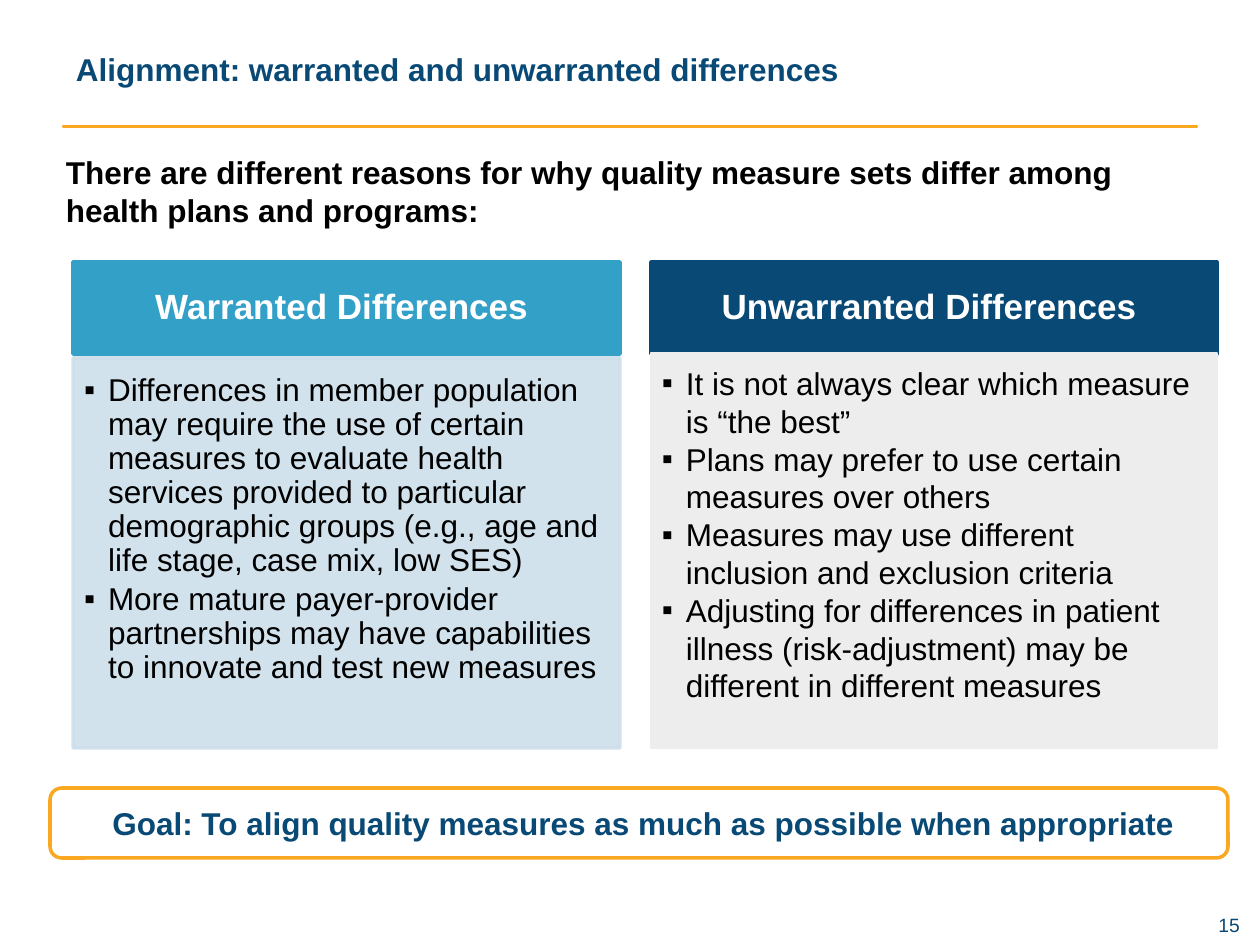
from lxml import etree
from pptx import Presentation, util as u
from pptx.dml.color import RGBColor
from pptx.enum import shapes, text
from pptx.oxml.ns import qn

SCALE = 914400 / 126
NAVY = RGBColor(0x09, 0x49, 0x75)
GOLD = RGBColor(0xFA, 0xA7, 0x21)
TEAL = RGBColor(0x33, 0xA0, 0xC8)
PALE_BLUE = RGBColor(0xCE, 0xDF, 0xEB)
GREY = RGBColor(0xED, 0xED, 0xED)
WHITE = RGBColor(0xFF, 0xFF, 0xFF)
BLACK = RGBColor(0x00, 0x00, 0x00)

INSETS = (13, 6, 13, 6)
HEADING_INSETS = (15, 9, 15, 9)
LEFT, CENTER, RIGHT = text.PP_ALIGN.LEFT, text.PP_ALIGN.CENTER, text.PP_ALIGN.RIGHT
TOP, MIDDLE = text.MSO_ANCHOR.TOP, text.MSO_ANCHOR.MIDDLE

WARRANTED = [
    "Differences in member population may require the use of certain measures to evaluate "
    "health services provided to particular demographic groups (e.g., age and life stage, "
    "case mix, low SES)",
    "More mature payer-provider partnerships may have capabilities to innovate and test new measures",
]
UNWARRANTED = [
    "It is not always clear which measure is “the best”",
    "Plans may prefer to use certain measures over others",
    "Measures may use different inclusion and exclusion criteria",
    "Adjusting for differences in patient illness (risk-adjustment) may be different in "
    "different measures",
]


def px(length):
    return round(length * SCALE)


def add_block(page, area, fill, line, width, kind=shapes.MSO_SHAPE.RECTANGLE):
    block = page.shapes.add_shape(kind, *map(px, area))
    block.shadow.inherit = False
    block.fill.solid()
    block.fill.fore_color.rgb = fill
    block.line.color.rgb = line
    block.line.width = u.Pt(width)
    return block


def add_box(page, area):
    return page.shapes.add_textbox(*map(px, area))


def set_opacity(block, percent):
    for color in block._element.spPr.iter(qn("a:srgbClr")):
        etree.SubElement(color, qn("a:alpha"), val=str(percent * 1000))


def add_bullet(para, indent):
    properties = para._p.get_or_add_pPr()
    properties.set("marL", str(px(indent)))
    properties.set("indent", str(-px(indent)))
    etree.SubElement(properties, qn("a:buFont"), typeface="Arial")
    etree.SubElement(properties, qn("a:buChar"), char="▪")


def write(box, lines, color, size=18, bold=False, align=LEFT, anchor=TOP,
          insets=INSETS, spacing=None, after=0, bullets=False):
    frame = box.text_frame
    frame.word_wrap = True
    frame.vertical_anchor = anchor
    frame.margin_left, frame.margin_top, frame.margin_right, frame.margin_bottom = map(px, insets)
    for index, line in enumerate(lines):
        para = frame.add_paragraph() if index else frame.paragraphs[0]
        para.text = line
        para.alignment = align
        if spacing:
            para.line_spacing = spacing
        if after:
            para.space_after = u.Pt(after)
        if bullets:
            add_bullet(para, 24)
        para.font.name = "Arial"
        para.font.size = u.Pt(size)
        para.font.bold = bold
        para.font.color.rgb = color


def add_heading(page, area, line, fill):
    heading = add_block(page, area, fill, fill, 2)
    write(heading, [line], WHITE, 20, True, CENTER, MIDDLE, HEADING_INSETS, 0.9)


def main():
    deck = Presentation()
    deck.slide_width, deck.slide_height = px(1260), px(945)
    page = deck.slides.add_slide(deck.slide_layouts[6])

    add_block(page, (63, 126, 1134, 1), GOLD, GOLD, 1)
    write(add_box(page, (63, 21, 1134, 95)),
          ["Alignment: warranted and unwarranted differences"], NAVY, bold=True, anchor=MIDDLE)
    write(add_box(page, (53, 147, 1134, 105)),
          ["There are different reasons for why quality measure sets differ among "
           "health plans and programs:"], BLACK, bold=True)

    add_heading(page, (73, 262, 547, 92), "Warranted Differences ", TEAL)
    warranted = add_block(page, (73, 358, 547, 390), PALE_BLUE, PALE_BLUE, 2)
    set_opacity(warranted, 90)
    write(warranted, WARRANTED, BLACK, insets=(11, 16, 15, 16),
          spacing=0.9, after=3, bullets=True)

    add_heading(page, (651, 262, 566, 92), "Unwarranted Differences ", NAVY)
    unwarranted = add_block(page, (651, 353, 566, 395), GREY, GREY, 0.75)
    write(unwarranted, UNWARRANTED, BLACK, insets=(11, 11, 15, 16), bullets=True)

    goal = add_block(page, (50, 788, 1178, 70), WHITE, GOLD, 2,
                     shapes.MSO_SHAPE.ROUNDED_RECTANGLE)
    write(goal, [" Goal: To align quality measures as much as possible when appropriate"],
          NAVY, bold=True, align=CENTER, anchor=MIDDLE)

    write(add_box(page, (935, 913, 305, 24)), ["15"], NAVY, 11,
          align=RIGHT, insets=(0, 0, 0, 0))
    deck.save("out.pptx")


if __name__ == "__main__":
    main()
